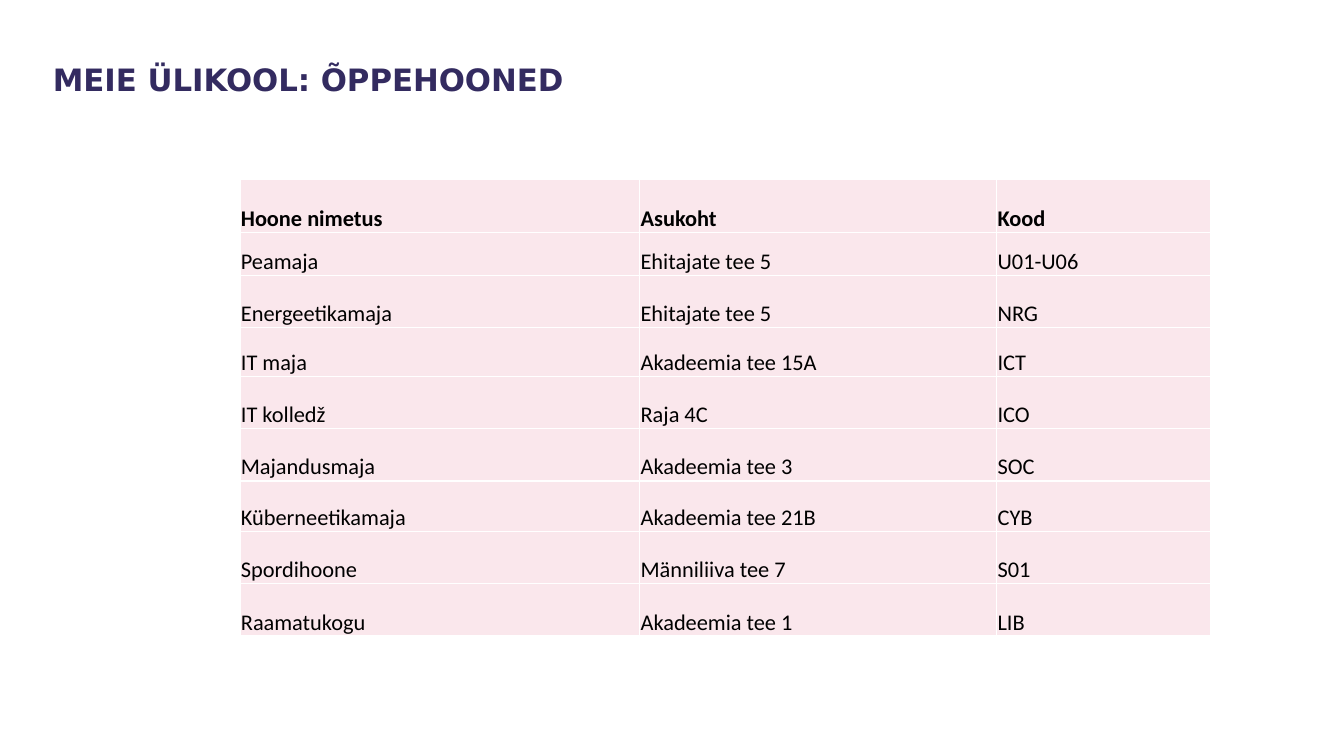
from lxml.etree import SubElement
from pptx import Presentation
from pptx.dml.color import RGBColor
from pptx.enum.text import MSO_ANCHOR as Anchor
from pptx.oxml.ns import qn
from pptx.util import Pt

INK, NAVY, ROSE, WHITE = "000000", "332B60", "FAE7EC", "FFFFFF"

BUILDINGS = [
    ("Hoone nimetus", "Asukoht", "Kood"),
    ("Peamaja", "Ehitajate tee 5", "U01-U06"),
    ("Energeetikamaja", "Ehitajate tee 5", "NRG"),
    ("IT maja", "Akadeemia tee 15A", "ICT"),
    ("IT kolledž", "Raja 4C", "ICO"),
    ("Majandusmaja", "Akadeemia tee 3", "SOC"),
    ("Küberneetikamaja", "Akadeemia tee 21B", "CYB"),
    ("Spordihoone", "Männiliiva tee 7", "S01"),
    ("Raamatukogu", "Akadeemia tee 1", "LIB"),
]
COLUMN_SHARES = (0.412, 0.368, 0.22)
ROW_HEIGHTS = (37.4, 31, 37.4, 34.6, 37.4, 37.4, 36, 37.4, 37.4)


def color(hex_code):
    """Turn a hex string into a colour."""
    return RGBColor.from_string(hex_code)


def write(frame, text, size=16, font="Calibri", ink=INK, bold=False):
    """Put one formatted run of text into a text frame."""
    run = frame.paragraphs[0].add_run()
    run.text = text
    run.font.size = Pt(size)
    run.font.name = font
    run.font.bold = bold
    run.font.color.rgb = color(ink)


def outline(cell, ink, width):
    """Draw the four borders of a table cell."""
    properties = cell._tc.get_or_add_tcPr()
    for side in ("lnL", "lnR", "lnT", "lnB"):
        border = SubElement(properties, qn(f"a:{side}"), w=str(Pt(width)))
        paint = SubElement(border, qn("a:solidFill"))
        SubElement(paint, qn("a:srgbClr"), val=ink)


def add_heading(slide, left, top, width, height):
    """Place the slide heading in the given box."""
    heading = slide.shapes.add_textbox(Pt(left), Pt(top), Pt(width), Pt(height))
    frame = heading.text_frame
    frame.word_wrap = True
    frame.margin_left = frame.margin_right = 0
    frame.margin_top = frame.margin_bottom = 0
    write(frame, "MEIE ÜLIKOOL: ÕPPEHOONED", size=22, font="DejaVu Sans",
          ink=NAVY, bold=True)


def add_buildings(slide, left, top, width):
    """Place the table of buildings, its columns sharing the given width."""
    buildings = slide.shapes.add_table(
        len(BUILDINGS), len(COLUMN_SHARES),
        Pt(left), Pt(top), Pt(width), Pt(sum(ROW_HEIGHTS))).table
    buildings.horz_banding = False
    for column, share in zip(buildings.columns, COLUMN_SHARES):
        column.width = Pt(width * share)
    for row, height, (index, entries) in zip(
            buildings.rows, ROW_HEIGHTS, enumerate(BUILDINGS)):
        row.height = Pt(height)
        for cell, entry in zip(row.cells, entries):
            cell.margin_left = cell.margin_right = cell.margin_top = Pt(0.7)
            cell.margin_bottom = 0
            cell.vertical_anchor = Anchor.BOTTOM
            outline(cell, WHITE, 1)
            cell.fill.solid()
            cell.fill.fore_color.rgb = color(ROSE)
            write(cell.text_frame, entry, bold=index == 0)


def main():
    """Build the slide and save it."""
    deck = Presentation()
    deck.slide_width, deck.slide_height = Pt(960), Pt(540)
    slide = deck.slides.add_slide(deck.slide_layouts[6])
    add_heading(slide, 37.8, 43.2, 826.6, 64)
    add_buildings(slide, 171.4, 128.4, 693)
    deck.save("out.pptx")


if __name__ == "__main__":
    main()
